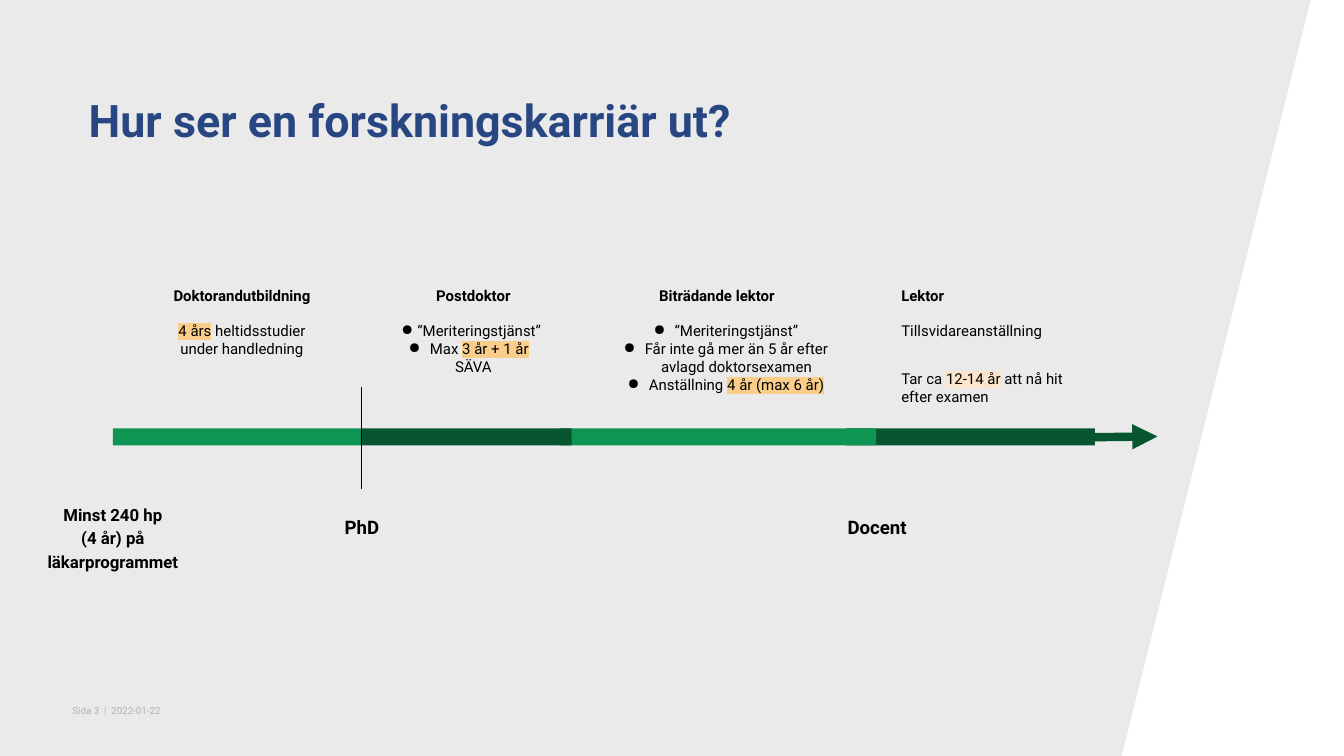
"""Build the slide that shows a research career as a timeline."""
from dataclasses import dataclass
from typing import Any

from lxml.etree import SubElement
from pptx import Presentation
from pptx.dml.color import RGBColor
from pptx.enum.shapes import MSO_CONNECTOR, MSO_SHAPE
from pptx.enum.text import MSO_ANCHOR, MSO_AUTO_SIZE, PP_ALIGN
from pptx.oxml.ns import qn
from pptx.util import Inches, Pt

INK = {"black": "000000", "blue": "274682", "grey": "B2B2B2", "back": "EAEAEA",
       "dark": "085631", "light": "0E9453", "amber": "FACE8A", "cream": "FCE5CD"}
MID, LEFT = PP_ALIGN.CENTER, PP_ALIGN.LEFT
SMALL, GAP, PAD = 10.7, 21.3, 0.13
Place = tuple[float, float, float, float]


@dataclass
class Line:
    """A paragraph; text between asterisks is marked."""
    text: str
    size: float = SMALL
    bold: bool = False
    ink: str = "black"
    align: Any = MID
    space: float | None = None
    before: float = 0
    after: float = 0
    margin: float = 0
    indent: float = 0
    bullet: bool = False
    mark: str = "amber"


@dataclass
class Box:
    """A block of text."""
    place: Place
    lines: list[Line]
    inset: Place | None = (PAD, PAD, PAD, PAD)
    wrap: bool = True


@dataclass
class Bar:
    """One stage of the timeline."""
    left: float
    width: float
    ink: str


@dataclass
class Rule:
    """A straight line."""
    ends: Place
    ink: str
    width: float
    arrow: bool = False


def apply(target: Any, values: dict[str, Any]) -> None:
    for name, value in values.items():
        setattr(target, name, value)


def shade(name: str) -> RGBColor:
    return RGBColor.from_string(INK[name])


def write(para: Any, line: Line) -> None:
    apply(para, {"alignment": line.align, "line_spacing": line.space,
                 "space_before": Pt(line.before), "space_after": Pt(line.after)})
    props = para._p.get_or_add_pPr()
    props.set("marL", str(Inches(line.margin)))
    props.set("indent", str(Inches(line.indent)))
    if line.bullet:
        SubElement(props, qn("a:buChar")).set("char", "●")
    for place, part in enumerate(line.text.split("*")):
        for row, piece in enumerate(part.split("\n")):
            if row:
                para.add_line_break()
            if not piece:
                continue
            run = para.add_run()
            run.text = piece
            apply(run.font, {"name": "Roboto", "size": Pt(line.size), "bold": line.bold})
            run.font.color.rgb = shade(line.ink)
            if place % 2:
                style = run._r.get_or_add_rPr()
                glow = SubElement(style, qn("a:highlight"))
                SubElement(glow, qn("a:srgbClr")).set("val", INK[line.mark])
                style.find(qn("a:solidFill")).addnext(glow)


def fill_text(shape: Any, box: Box) -> None:
    frame = shape.text_frame
    apply(frame, {"word_wrap": box.wrap, "auto_size": MSO_AUTO_SIZE.NONE,
                  "vertical_anchor": MSO_ANCHOR.TOP})
    if box.inset:
        sides = ("margin_left", "margin_top", "margin_right", "margin_bottom")
        apply(frame, dict(zip(sides, map(Inches, box.inset))))
    for count, line in enumerate(box.lines):
        write(frame.add_paragraph() if count else frame.paragraphs[0], line)


def add_box(slide: Any, box: Box) -> None:
    fill_text(slide.shapes.add_textbox(*map(Inches, box.place)), box)


def paint(shape: Any, ink: str) -> None:
    shape.shadow.inherit = False
    shape.fill.solid()
    shape.fill.fore_color.rgb = shade(ink)
    shape.line.fill.background()


def add_bar(slide: Any, bar: Bar) -> None:
    place = map(Inches, (bar.left, 4.25, bar.width, 0.17))
    paint(slide.shapes.add_shape(MSO_SHAPE.RECTANGLE, *place), bar.ink)


def add_rule(slide: Any, rule: Rule) -> None:
    link = slide.shapes.add_connector(MSO_CONNECTOR.STRAIGHT, *map(Inches, rule.ends))
    link.line.color.rgb = shade(rule.ink)
    link.line.width = Pt(rule.width)
    if rule.arrow:
        SubElement(link.line._get_or_add_ln(), qn("a:tailEnd")).set("type", "triangle")
    SubElement(link._element.spPr, qn("a:effectLst"))


def head(text: str, **more: Any) -> Line:
    return Line(text, bold=True, **more)


def stone(text: str, size: float = 13.3) -> Line:
    return head(text, size=size, space=1.15, after=GAP)


def point(text: str, margin: float, before: float = 0) -> Line:
    return Line(text, margin=margin, indent=-0.21, bullet=True, before=before)


BREAK = 12.6
TITLE = Box((0.78, 0.93, 10.87, 0.7),
            [head("Hur ser en forskningskarriär ut?", size=32, ink="blue",
                  align=LEFT, space=0.9)], None)
BOXES = [
    Box((0.62, 6.94, 1.15, 0.22),
        [Line("Sida 3  |  2022-01-22", 7, ink="grey", align=LEFT)], None, False),
    Box((1.49, 2.71, 1.82, 1.21), [
        head("Doktorandutbildning"),
        Line("*4 års* heltidsstudier under handledning", before=BREAK, after=GAP)]),
    Box((3.72, 2.71, 1.82, 1.21), [
        head("Postdoktor", indent=-PAD),
        point("“Meriteringstjänst”", 0, BREAK),
        point("Max *3 år + 1 år* SÄVA", 0)], (2 * PAD, PAD, PAD, PAD)),
    Box((5.69, 2.71, 2.84, 1.21), [
        head("Biträdande lektor"),
        point("“Meriteringstjänst”", 0.39, BREAK),
        point("Får inte gå mer än 5 år efter avlagd doktorsexamen", 0.39),
        point("Anställning *4 år (max 6 år)*", 0.39)]),
    Box((8.81, 2.71, 1.87, 1.36), [
        head("Lektor", align=LEFT),
        Line("Tillsvidareanställning", align=LEFT, before=BREAK),
        Line("Tar ca *12-14 år* att nå hit efter examen", align=LEFT,
             before=GAP, after=GAP, mark="cream")]),
    Box((0.32, 4.85, 1.6, 0.89), [stone("Minst 240 hp\n(4 år) på läkarprogrammet", 12)]),
    Box((3.12, 4.96, 0.94, 0.48), [stone("PhD")]),
    Box((8.23, 4.96, 0.94, 0.48), [stone("Docent")]),
]
BARS = [Bar(8.39, 2.47, "dark"), Bar(1.12, 2.47, "light"),
        Bar(5.55, 3.14, "light"), Bar(3.58, 2.09, "dark")]
RULES = [Rule((8.86, 4.36, 11.48, 4.33), "dark", 6, True),
         Rule((3.59, 4.85, 3.59, 3.84), "black", 0.75)]


def main() -> None:
    deck = Presentation()
    apply(deck, {"slide_width": Inches(13.33), "slide_height": Inches(7.5)})
    slide = deck.slides.add_slide(deck.slide_layouts[5])
    title = slide.shapes.title
    apply(title, dict(zip(("left", "top", "width", "height"), map(Inches, TITLE.place))))
    fill_text(title, TITLE)
    pen = slide.shapes.build_freeform(0, 0, Inches(1))
    pen.add_line_segments([(13.33, 0), (10.55, 7.5), (0, 7.5)])
    panel = pen.convert_to_shape()
    paint(panel, "back")
    title._element.addprevious(panel._element)
    for bar in BARS:
        add_bar(slide, bar)
    for rule in RULES:
        add_rule(slide, rule)
    for box in BOXES:
        add_box(slide, box)
    deck.save("out.pptx")


if __name__ == "__main__":
    main()
